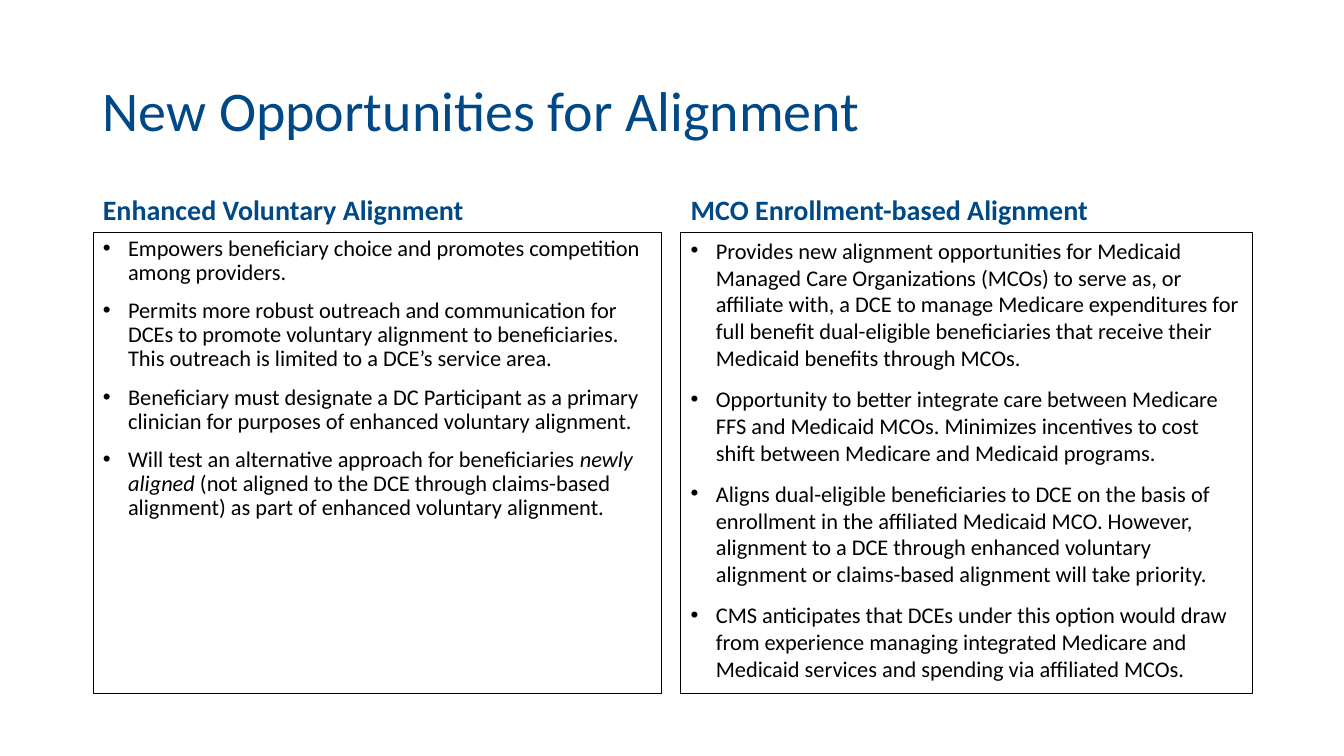
import pptx
import pptx.util
import pptx.dml.color
import pptx.enum.text
import pptx.oxml.ns
from lxml import etree

Inches = pptx.util.Inches
Pt = pptx.util.Pt
Align = pptx.enum.text.PP_ALIGN
Anchor = pptx.enum.text.MSO_ANCHOR

BLUE = pptx.dml.color.RGBColor(0x00, 0x49, 0x86)
BLACK = pptx.dml.color.RGBColor(0x00, 0x00, 0x00)
FONT = "Calibri"

# Each point is a list of (text, italic) runs.
VOLUNTARY = [
    [("Empowers beneficiary choice and promotes competition among providers.", False)],
    [("Permits more robust outreach and communication for DCEs to promote voluntary "
      "alignment to beneficiaries. This outreach is limited to a DCE’s service area.", False)],
    [("Beneficiary must designate a DC Participant as a primary clinician for purposes "
      "of enhanced voluntary alignment.", False)],
    [("Will test an alternative approach for beneficiaries ", False),
     ("newly aligned", True),
     (" (not aligned to the DCE through claims-based alignment) as part of enhanced "
      "voluntary alignment.", False)],
]
MCO = [
    [("Provides new alignment opportunities for Medicaid Managed Care Organizations "
      "(MCOs) to serve as, or affiliate with, a DCE to manage Medicare expenditures for "
      "full benefit dual-eligible beneficiaries that receive their Medicaid benefits "
      "through MCOs.", False)],
    [("Opportunity to better integrate care between Medicare FFS and Medicaid MCOs. "
      "Minimizes incentives to cost shift between Medicare and Medicaid programs.", False)],
    [("Aligns dual-eligible beneficiaries to DCE on the basis of enrollment in the "
      "affiliated Medicaid MCO. However, alignment to a DCE through enhanced voluntary "
      "alignment or claims-based alignment will take priority.", False)],
    [("CMS anticipates that DCEs under this option would draw from experience managing "
      "integrated Medicare and Medicaid services and spending via affiliated MCOs.", False)],
]


def place(shape, left, top, width, height, anchor):
    """Move a placeholder and return its text frame."""
    shape.left, shape.top = Inches(left), Inches(top)
    shape.width, shape.height = Inches(width), Inches(height)
    frame = shape.text_frame
    frame.word_wrap = True
    frame.auto_size = pptx.enum.text.MSO_AUTO_SIZE.NONE
    frame.vertical_anchor = anchor
    return frame


def add_run(para, text, size, color, bold=False, italic=False):
    run = para.add_run()
    run.text = text
    font = run.font
    font.name, font.size = FONT, Pt(size)
    font.bold, font.italic = bold, italic
    font.color.rgb = color


def add_bullet(para):
    props = para._p.get_or_add_pPr()
    props.set("marL", str(Inches(0.25)))
    props.set("indent", str(Inches(-0.25)))
    for tag, key, value in (("a:buFont", "typeface", "Arial"), ("a:buChar", "char", "•")):
        etree.SubElement(props, pptx.oxml.ns.qn(tag)).set(key, value)


def set_head(shape, box, anchor, text, size, bold):
    para = place(shape, *box, anchor).paragraphs[0]
    para.alignment = Align.LEFT
    para.line_spacing = 0.9
    para.space_before = Pt(0)
    add_run(para, text, size, BLUE, bold)


def set_list(shape, box, points, spacing):
    shape.line.color.rgb = BLACK
    shape.line.width = Pt(0.25)
    frame = place(shape, *box, Anchor.TOP)
    for i, runs in enumerate(points):
        para = frame.add_paragraph() if i else frame.paragraphs[0]
        add_bullet(para)
        para.alignment = Align.LEFT
        para.line_spacing = spacing
        para.space_before = Pt(10 if i else 0)
        for text, italic in runs:
            add_run(para, text, 16, BLACK, italic=italic)


def main():
    deck = pptx.Presentation()
    deck.slide_width, deck.slide_height = Inches(13.33), Inches(7.5)
    slide = deck.slides.add_slide(deck.slide_layouts.get_by_name("Comparison"))
    title, *parts = slide.placeholders
    set_head(title, (0.92, 0.4, 11.5, 1.45), Anchor.MIDDLE,
             "New Opportunities for Alignment", 40, False)
    columns = (
        (0.92, 5.64, "Enhanced Voluntary Alignment", VOLUNTARY, 0.9),
        (6.75, 5.67, "MCO Enrollment-based Alignment", MCO, 1.0),
    )
    for head, body, column in zip(parts[::2], parts[1::2], columns):
        left, width, label, points, spacing = column
        set_head(head, (left, 1.4, width, 0.9), Anchor.BOTTOM, label, 20, True)
        set_list(body, (left, 2.3, width, 4.58), points, spacing)
    deck.save("out.pptx")


if __name__ == "__main__":
    main()
